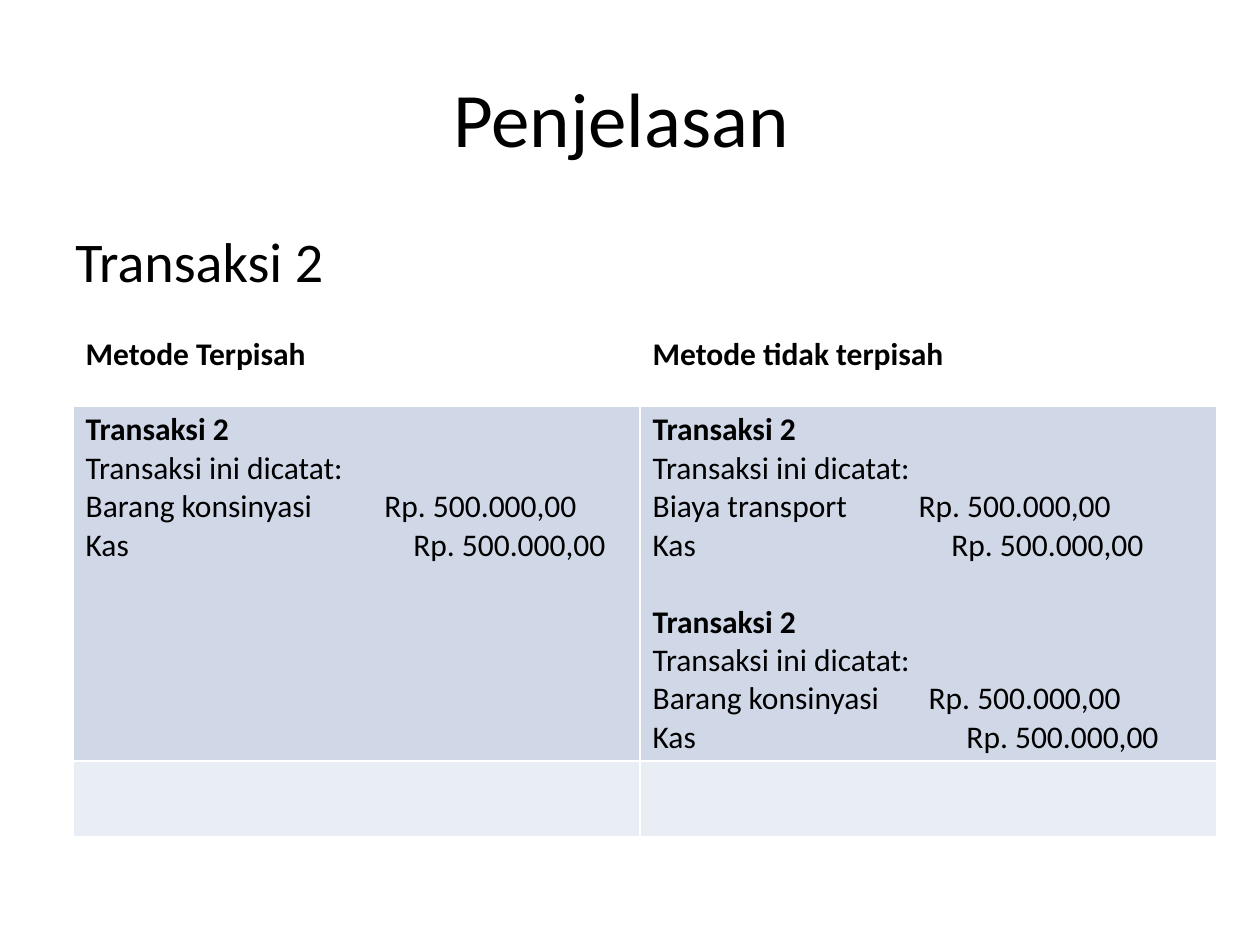
from lxml import etree
from pptx import Presentation
from pptx.dml.color import RGBColor
from pptx.enum.text import MSO_ANCHOR, PP_ALIGN
from pptx.oxml.ns import qn
from pptx.util import Inches, Pt

CENTER, LEFT = PP_ALIGN.CENTER, PP_ALIGN.LEFT
MIDDLE, TOP = MSO_ANCHOR.MIDDLE, MSO_ANCHOR.TOP
COLORS = {"text": "000000", "border": "FFFFFF", "entry": "D0D8E8", "empty": "E9EDF4"}

TITLE = "Penjelasan "
SUBTITLE = "Transaksi 2"
METHODS = ["Metode Terpisah", "Metode tidak terpisah"]
HEADING, INTRO, AMOUNT = "Transaksi 2", "Transaksi ini dicatat:", "Rp. 500.000,00"
JOURNALS = [
    [[("Barang konsinyasi", 2.37), ("Kas", 2.6)]],
    [
        [("Biaya transport", 2.11), ("Kas", 2.37)],
        [("Barang konsinyasi", 2.19), ("Kas", 2.49)],
    ],
]
COLUMN_WIDTHS = [4.5, 4.58]
ROW_HEIGHTS = [0.6, 2.83, 0.6]
ROW_FILLS = [None, "entry", "empty"]
TABLE_LEFT, TABLE_TOP = 0.58, 2.61
BORDERS = {"lnL": 1, "lnR": 1, "lnT": 1, "lnB": 1}
ENTRY_GAP = 22


def write(paragraph, text, size, bold=False, align=LEFT):
    paragraph.alignment = align
    run = paragraph.add_run()
    run.text = text
    for name, value in {"name": "Calibri", "size": Pt(size), "bold": bold}.items():
        setattr(run.font, name, value)
    run.font.color.rgb = RGBColor.from_string(COLORS["text"])


def set_tab(paragraph, position):
    properties = paragraph._p.get_or_add_pPr()
    stops = etree.SubElement(properties, qn("a:tabLst"))
    etree.SubElement(stops, qn("a:tab"), pos=str(Inches(position)), algn="l")


def set_borders(cell, widths):
    properties = cell._tc.get_or_add_tcPr()
    for index, (side, width) in enumerate(widths.items()):
        line = etree.Element(qn(f"a:{side}"), w=str(Pt(width)))
        fill = etree.SubElement(line, qn("a:solidFill"))
        etree.SubElement(fill, qn("a:srgbClr"), val=COLORS["border"])
        properties.insert(index, line)


def write_journal(frame, entries):
    for number, accounts in enumerate(entries):
        heading = frame.add_paragraph() if number else frame.paragraphs[0]
        if number:
            heading.space_before = Pt(ENTRY_GAP)
        write(heading, HEADING, 18, bold=True)
        write(frame.add_paragraph(), INTRO, 18)
        for account, position in accounts:
            posting = frame.add_paragraph()
            write(posting, f"{account}\t{AMOUNT}", 18)
            set_tab(posting, position)


def add_journal_table(slide):
    table = slide.shapes.add_table(
        len(ROW_HEIGHTS), len(COLUMN_WIDTHS), Inches(TABLE_LEFT), Inches(TABLE_TOP),
        Inches(sum(COLUMN_WIDTHS)), Inches(sum(ROW_HEIGHTS)),
    ).table
    table.first_row = table.horz_banding = False
    for column, width in zip(table.columns, COLUMN_WIDTHS):
        column.width = Inches(width)
    for row, height, color in zip(table.rows, ROW_HEIGHTS, ROW_FILLS):
        row.height = Inches(height)
        for cell in row.cells:
            if color:
                cell.fill.solid()
                cell.fill.fore_color.rgb = RGBColor.from_string(COLORS[color])
            else:
                cell.fill.background()
            set_borders(cell, BORDERS if color else {**BORDERS, "lnB": 3})
    for column, (method, entries) in enumerate(zip(METHODS, JOURNALS)):
        write(table.cell(0, column).text_frame.paragraphs[0], method, 18, bold=True)
        write_journal(table.cell(1, column).text_frame, entries)


def main():
    """Build the slide comparing the two consignment recording methods."""
    deck = Presentation()
    deck.slide_width, deck.slide_height = Inches(10), Inches(7.5)
    slide = deck.slides.add_slide(deck.slide_layouts[5])

    title = slide.shapes.title
    place = {"left": 0.5, "top": 0.3, "width": 9, "height": 1.25}
    for name, value in place.items():
        setattr(title, name, Inches(value))
    title.text_frame.vertical_anchor = MIDDLE
    write(title.text_frame.paragraphs[0], TITLE, 44, align=CENTER)

    subtitle = slide.shapes.add_textbox(Inches(0.5), Inches(1.75), Inches(9), Inches(0.7))
    subtitle.text_frame.word_wrap = True
    subtitle.text_frame.vertical_anchor = TOP
    write(subtitle.text_frame.paragraphs[0], SUBTITLE, 32)

    add_journal_table(slide)
    deck.save("out.pptx")


if __name__ == "__main__":
    main()
